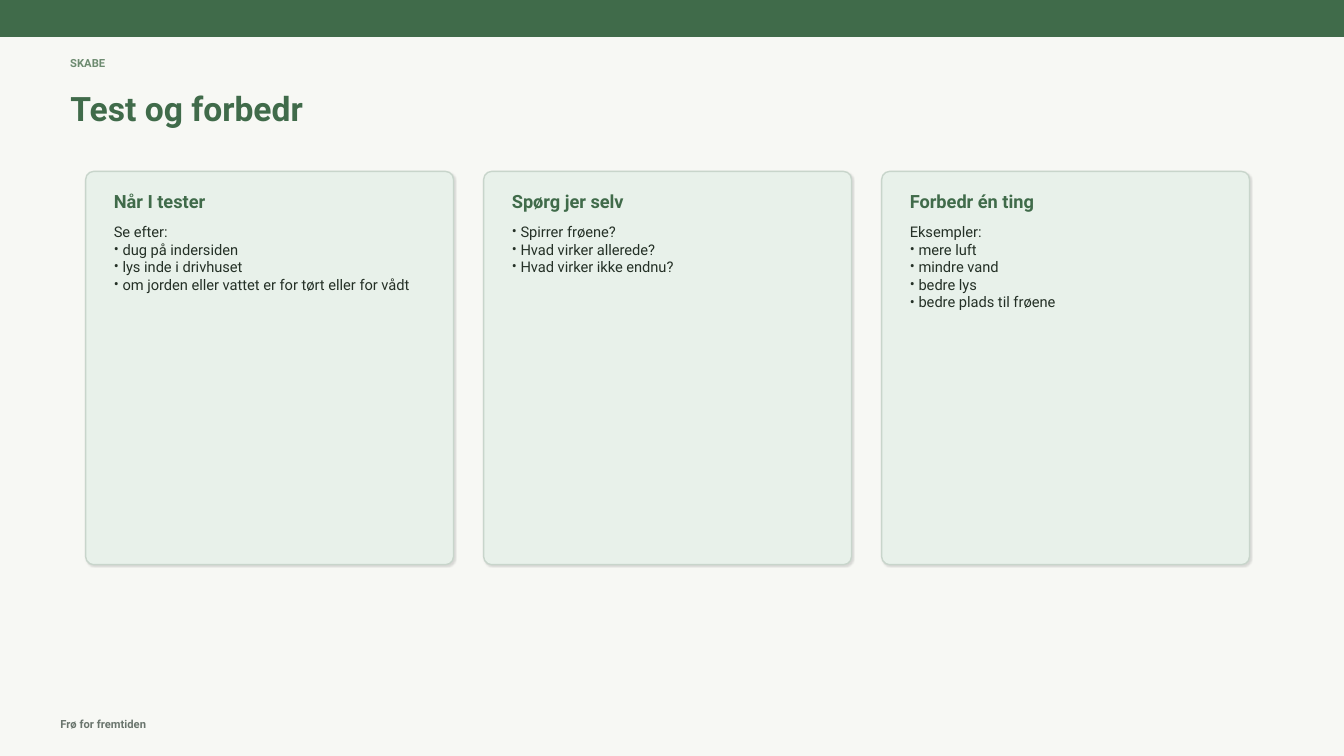
from lxml import etree
from pptx import Presentation
from pptx.dml.color import RGBColor
from pptx.enum.shapes import MSO_SHAPE
from pptx.enum.text import MSO_ANCHOR, MSO_AUTO_SIZE, PP_ALIGN
from pptx.oxml.ns import qn
from pptx.util import Cm, Pt

RECTANGLE = MSO_SHAPE.RECTANGLE
ROUNDED = MSO_SHAPE.ROUNDED_RECTANGLE
TOP, MIDDLE = MSO_ANCHOR.TOP, MSO_ANCHOR.MIDDLE
LEFT = PP_ALIGN.LEFT
NO_AUTOFIT = MSO_AUTO_SIZE.NONE

# Content
SECTION = "SKABE"
TITLE = "Test og forbedr"
FOOTER = "Frø for fremtiden"
# Each card: heading, lead-in line (or None), bullet points
CARDS = [
    ("Når I tester", "Se efter:",
     ["dug på indersiden", "lys inde i drivhuset",
      "om jorden eller vattet er for tørt eller for vådt"]),
    ("Spørg jer selv", None,
     ["Spirrer frøene?", "Hvad virker allerede?", "Hvad virker ikke endnu?"]),
    ("Forbedr én ting", "Eksempler:",
     ["mere luft", "mindre vand", "bedre lys", "bedre plads til frøene"]),
]

# Style
FONT = "Roboto"
COLORS = {
    "background": "F7F8F4", "green": "406B4A", "section": "6D8B70",
    "footer": "6A756D", "card": "E8F1EA", "border": "C8D5CB",
    "body": "243026", "shadow": "000000",
}

# Layout in centimetres
SLIDE_W, SLIDE_H = 33.87, 19.05
BAR_H = 0.91
CARD_LEFT, CARD_TOP, CARD_W, CARD_H, CARD_GAP = 2.16, 4.32, 9.27, 9.91, 0.76
CARD_INSET = 0.46
HEADING_TOP, HEADING_H = 4.72, 0.71
BODY_TOP, BODY_H = 5.49, 8.43
BULLET_INDENT = Cm(0.22)


def color(name):
    return RGBColor.from_string(COLORS[name])


def place(shape, left, top, width, height):
    shape.left, shape.top = Cm(left), Cm(top)
    shape.width, shape.height = Cm(width), Cm(height)


def style(paragraph, size, color_name, bold):
    paragraph.alignment = LEFT
    font = paragraph.font
    font.name, font.size, font.bold = FONT, Pt(size), bold
    font.color.rgb = color(color_name)


def prepare_frame(shape, anchor):
    frame = shape.text_frame
    frame.word_wrap = True
    frame.auto_size = NO_AUTOFIT
    frame.vertical_anchor = anchor
    return frame


def add_label(text, box, size, color_name):
    label = slide.shapes.add_textbox(*map(Cm, box))
    frame = prepare_frame(label, MIDDLE)
    frame.text = text
    style(frame.paragraphs[0], size, color_name, True)


def add_panel(preset, box, fill, line):
    panel = slide.shapes.add_shape(preset, *map(Cm, box))
    panel.shadow.inherit = False
    panel.fill.solid()
    panel.fill.fore_color.rgb = color(fill)
    panel.line.color.rgb = color(line)
    panel.line.width = Pt(1)
    return panel


def add_soft_shadow(panel):
    effects = panel._element.spPr.find(qn("a:effectLst"))
    shadow = etree.SubElement(
        effects, qn("a:outerShdw"), blurRad=str(Pt(1)), dist=str(Pt(1)),
        dir=str(45 * 60000), algn="bl", rotWithShape="0")
    tint = etree.SubElement(shadow, qn("a:srgbClr"), val=COLORS["shadow"])
    etree.SubElement(tint, qn("a:alpha"), val="12000")


def add_bullet(paragraph):
    properties = paragraph._p.get_or_add_pPr()
    properties.set("marL", str(BULLET_INDENT))
    properties.set("indent", str(-BULLET_INDENT))
    etree.SubElement(properties, qn("a:buFont"), typeface=FONT)
    etree.SubElement(properties, qn("a:buChar"), char="•")


def add_card(left, heading, lead_in, points):
    panel = add_panel(ROUNDED, (left, CARD_TOP, CARD_W, CARD_H), "card", "border")
    panel.adjustments[0] = 0.022
    add_soft_shadow(panel)

    text_left, text_w = left + CARD_INSET, CARD_W - 2 * CARD_INSET
    add_label(heading, (text_left, HEADING_TOP, text_w, HEADING_H), 13, "green")

    body = slide.shapes.add_textbox(
        Cm(text_left), Cm(BODY_TOP), Cm(text_w), Cm(BODY_H))
    frame = prepare_frame(body, TOP)
    lead_lines = [lead_in] if lead_in else []
    frame.text = "\n".join(lead_lines + points)
    for index, paragraph in enumerate(frame.paragraphs):
        if index >= len(lead_lines):
            add_bullet(paragraph)
        style(paragraph, 10.5, "body", False)


# Slide and background
prs = Presentation()
prs.slide_width, prs.slide_height = Cm(SLIDE_W), Cm(SLIDE_H)
slide = prs.slides.add_slide(prs.slide_layouts[5])
slide.background.fill.solid()
slide.background.fill.fore_color.rgb = color("background")

# Top bar, footer and section label
add_panel(RECTANGLE, (0, 0, SLIDE_W, BAR_H), "green", "green")
add_label(FOOTER, (1.27, 17.98, 9.14, 0.51), 8, "footer")
add_label(SECTION, (1.52, 1.32, 7.62, 0.56), 8, "section")

# Title
title = slide.shapes.title
place(title, 1.52, 2.18, 22.1, 1.07)
title_frame = prepare_frame(title, MIDDLE)
title_frame.text = TITLE
style(title_frame.paragraphs[0], 24, "green", True)

# Cards
for column, (heading, lead_in, points) in enumerate(CARDS):
    add_card(CARD_LEFT + column * (CARD_W + CARD_GAP), heading, lead_in, points)

prs.save("out.pptx")
